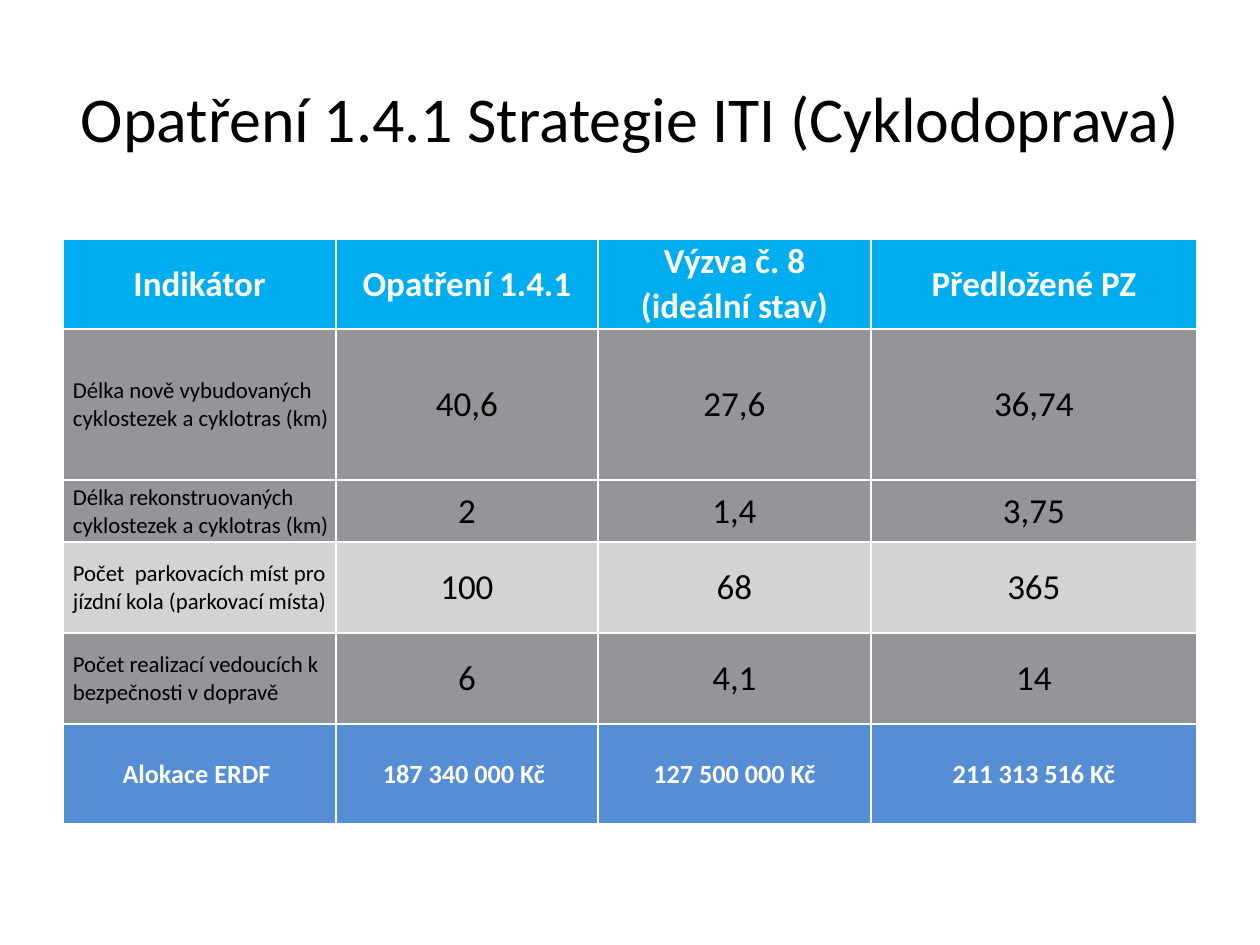
"""Build a slide comparing cycling indicators in a table."""
from lxml import etree
from pptx import Presentation
from pptx import util as u
from pptx.dml.color import RGBColor
from pptx.enum import text
from pptx.oxml.ns import qn

PX = 914400 // 126
COLORS = {"black": "000000", "white": "FFFFFF", "header": "00AEEF",
          "dark": "939598", "light": "D1D3D4", "total": "558ED5"}
FORMATS = {
    "header": {"size": u.Pt(20), "bold": True},
    "label": {"size": u.Pt(13), "bold": False},
    "value": {"size": u.Pt(20), "bold": False},
    "total": {"size": u.Pt(15), "bold": True},
}
COLUMNS = [273, 262, 273, 326]
ROWS = [
    (45, "header", ["Indikátor", "Opatření 1.4.1", "Výzva č. 8", "Předložené PZ"]),
    (45, "header", ["", "", "(ideální stav)", ""]),
    (151, "dark", ["Délka nově vybudovaných cyklostezek a cyklotras (km)", "40,6", "27,6", "36,74"]),
    (62, "dark", ["Délka rekonstruovaných cyklostezek a cyklotras (km)", "2", "1,4", "3,75"]),
    (91, "light", ["Počet  parkovacích míst pro jízdní kola (parkovací místa)", "100", "68", "365"]),
    (91, "dark", ["Počet realizací vedoucích k bezpečnosti v dopravě", "6", "4,1", "14"]),
    (100, "total", ["Alokace ERDF ", "187 340 000 Kč ", "127 500 000 Kč", "211 313 516 Kč"]),
]
THICK_EDGES = {(0, "B"), (1, "B"), (2, "T"), (2, "B"), (3, "T")}
OPEN_EDGES = {(0, 2, "B"), (1, 2, "T")}


def style_text(paragraph, style, color):
    for name, value in {"name": "Calibri", **style}.items():
        setattr(paragraph.font, name, value)
    paragraph.font.color.rgb = RGBColor.from_string(COLORS[color])


def add_edge(cell, side, points):
    properties = cell._tc.get_or_add_tcPr()
    line = etree.SubElement(properties, qn(f"a:ln{side}"), w=str(u.Pt(points)))
    if points:
        fill = etree.SubElement(line, qn("a:solidFill"))
        etree.SubElement(fill, qn("a:srgbClr"), val=COLORS["white"])
    else:
        etree.SubElement(line, qn("a:noFill"))


deck = Presentation()
deck.slide_width, deck.slide_height = 1260 * PX, 945 * PX
page = deck.slides.add_slide(deck.slide_layouts[5])

title = page.shapes.title
title.left, title.top, title.width, title.height = [n * PX for n in (63, 38, 1134, 157)]
frame = title.text_frame
frame.text = "Opatření 1.4.1 Strategie ITI (Cyklodoprava)"
frame.margin_left = frame.margin_right = 0
frame.vertical_anchor = text.MSO_ANCHOR.MIDDLE
style_text(frame.paragraphs[0], {"size": u.Pt(36.5)}, "black")

height = sum(row[0] for row in ROWS)
table = page.shapes.add_table(len(ROWS), len(COLUMNS), 63 * PX, 239 * PX,
                              sum(COLUMNS) * PX, height * PX).table
table.horz_banding = False
for column, width in zip(table.columns, COLUMNS):
    column.width = width * PX

for r, (row_height, kind, words) in enumerate(ROWS):
    table.rows[r].height = row_height * PX
    for c, word in enumerate(words):
        cell = table.cell(r, c)
        is_body = kind in ("dark", "light")
        is_label = is_body and c == 0
        for side in "LRTB":
            points = 1.5 if (r, side) in THICK_EDGES else 1
            add_edge(cell, side, 0 if (r, c, side) in OPEN_EDGES else points)
        cell.fill.solid()
        cell.fill.fore_color.rgb = RGBColor.from_string(COLORS[kind])
        layout = {"margin_left": (10 if is_label else 1) * PX, "margin_right": PX,
                  "margin_top": PX, "margin_bottom": 0,
                  "vertical_anchor": text.MSO_ANCHOR.MIDDLE}
        for name, value in layout.items():
            setattr(cell, name, value)
        cell.text = word
        para = cell.text_frame.paragraphs[0]
        para.alignment = text.PP_ALIGN.LEFT if is_label else text.PP_ALIGN.CENTER
        style = "label" if is_label else "value" if is_body else kind
        style_text(para, FORMATS[style], "black" if is_body else "white")

for c in (0, 1, 3):
    table.cell(0, c).merge(table.cell(1, c))

deck.save("out.pptx")
